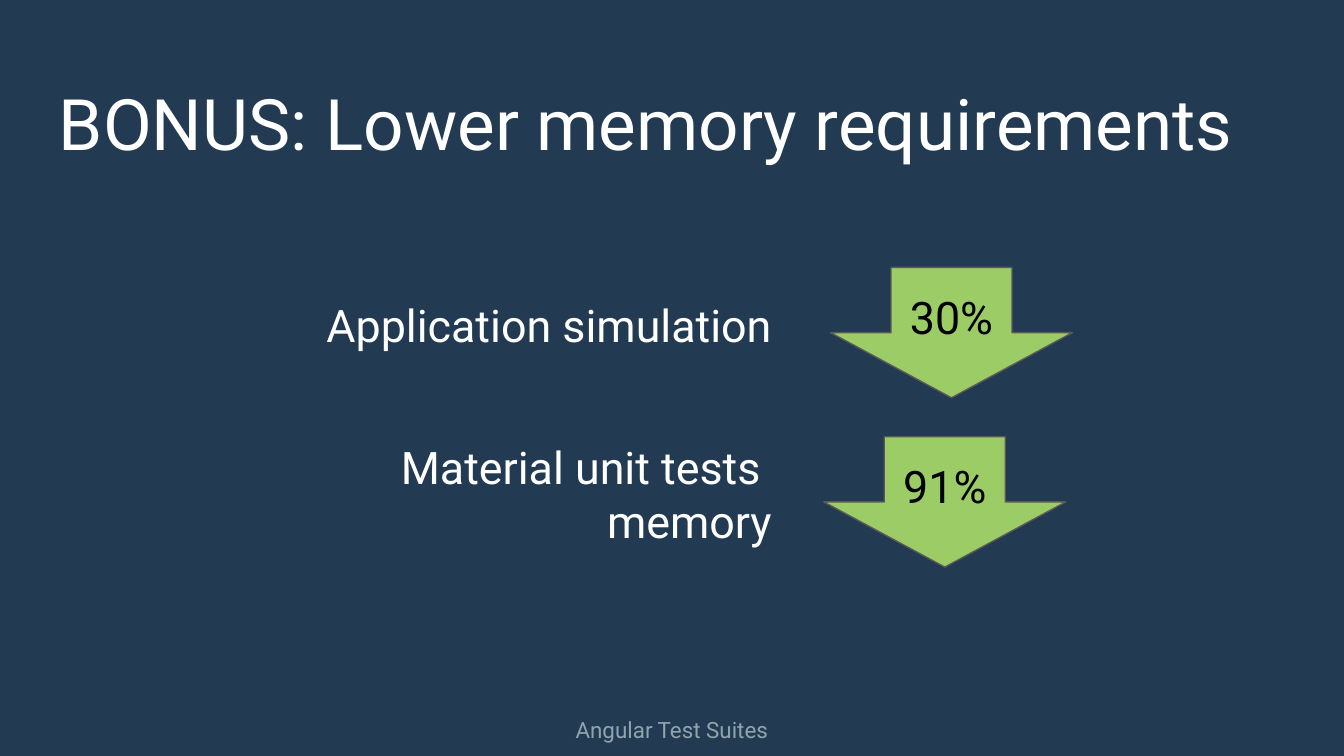
from pptx import Presentation
from pptx.dml.color import RGBColor as RGB
from pptx.enum.shapes import MSO_SHAPE as Shape
from pptx.enum.text import MSO_ANCHOR as Anchor, PP_ALIGN as Align
from pptx.util import Inches, Pt

WIDE = 10
HIGH = WIDE * 9 / 16
FONT = "Roboto"
NAVY, WHITE, GRAY = "233B52", "FFFFFF", "90A4AE"
GREEN, EDGE, BLACK = "9CCC65", "595959", "000000"

# Rows of the grid: top of the first label and step between rows
TOP, STEP = 1.87, 1.26
ROWS = [
    (["Application simulation"], "30%", 6.18),
    (["Material unit tests ", "memory"], "91%", 6.13),
]


def tint(code):
    return RGB.from_string(code)


def box(x, y, w, h):
    return [Inches(v) for v in (x, y, w, h)]


def write(shape, lines, size, color, align, anchor=Anchor.MIDDLE):
    frame = shape.text_frame
    frame.word_wrap = True
    frame.vertical_anchor = anchor
    frame.margin_left = frame.margin_right = Inches(0.1)
    frame.margin_top = frame.margin_bottom = Inches(0.1)
    for i, line in enumerate(lines):
        para = frame.add_paragraph() if i else frame.paragraphs[0]
        para.alignment = align
        run = para.add_run()
        run.text = line
        run.font.name = FONT
        run.font.size = Pt(size)
        run.font.color.rgb = tint(color)


def label(slide, area, *style):
    write(slide.shapes.add_textbox(*box(*area)), *style)


def arrow(slide, area, text):
    shape = slide.shapes.add_shape(Shape.DOWN_ARROW, *box(*area))
    shape.shadow.inherit = False
    shape.fill.solid()
    shape.fill.fore_color.rgb = tint(GREEN)
    shape.line.color.rgb = tint(EDGE)
    shape.line.width = Pt(0.75)
    write(shape, [text], 24, BLACK, Align.CENTER)


def main():
    deck = Presentation()
    deck.slide_width, deck.slide_height = Inches(WIDE), Inches(HIGH)
    slide = deck.slides.add_slide(deck.slide_layouts[6])
    slide.background.fill.solid()
    slide.background.fill.fore_color.rgb = tint(NAVY)

    # Title and footer
    label(slide, (0.34, 0.49, 9.32, 0.63),
          ["BONUS: Lower memory requirements"], 38, WHITE, Align.LEFT, Anchor.TOP)
    label(slide, (0, 5.22, WIDE, 0.41),
          ["Angular Test Suites"], 12, GRAY, Align.CENTER)

    # Labels on the left, then drops on the right, bottoms level
    for i, (lines, _, _) in enumerate(ROWS):
        label(slide, (1.5, TOP + i * STEP, 4.34, 1.09),
              lines, 24, WHITE, Align.RIGHT)
    for i, (_, drop, left) in enumerate(ROWS):
        arrow(slide, (left, TOP + i * STEP + 0.12, 1.8, 0.97), drop)

    deck.save("out.pptx")


if __name__ == "__main__":
    main()
